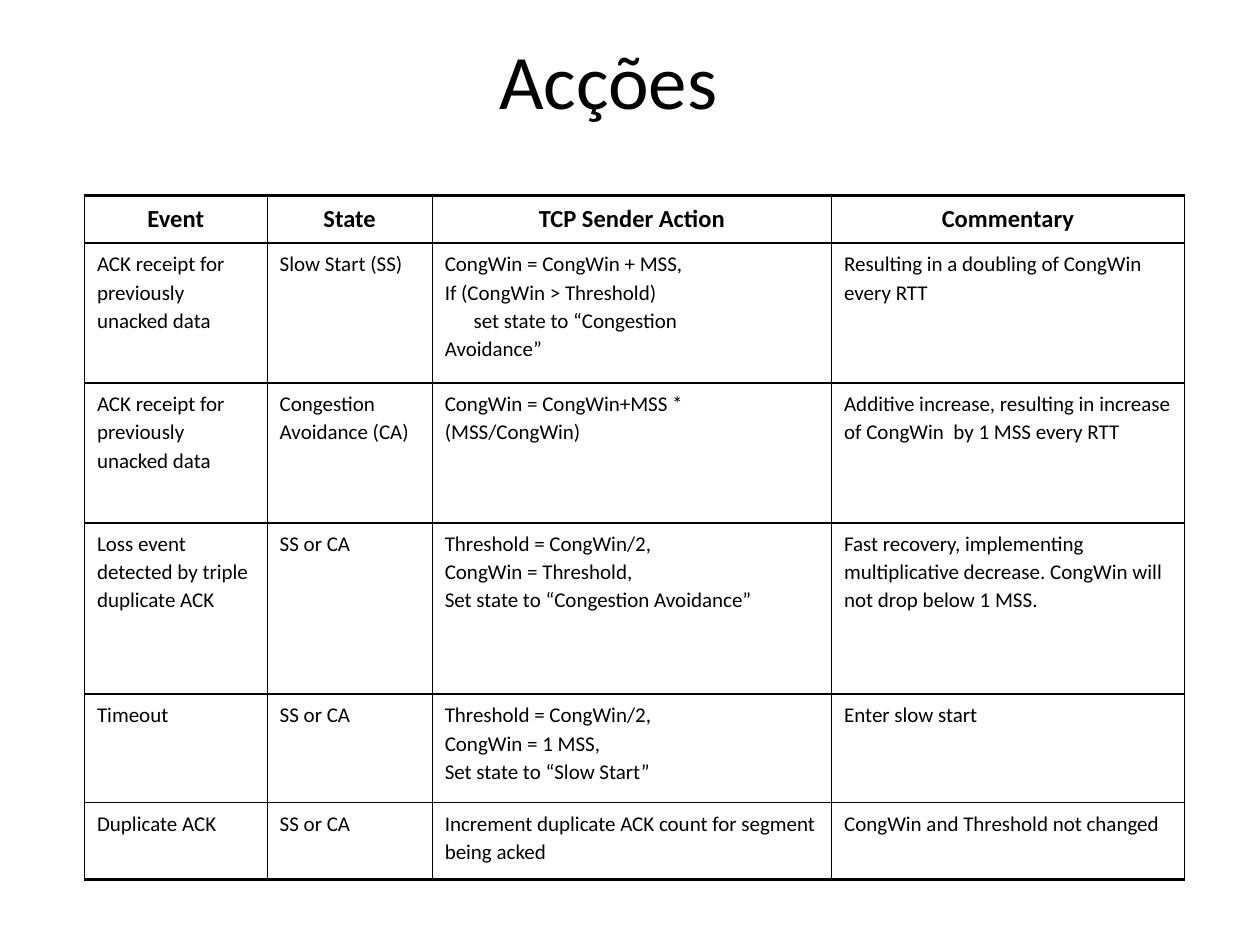
from lxml import etree
from pptx import Presentation, util as u
from pptx.dml.color import RGBColor
from pptx.enum import text
from pptx.oxml.ns import qn

INK, PAPER = "000000", "FFFFFF"
HEADERS = ["Event", "State", "TCP Sender Action", "Commentary"]
RULES = [
    ["ACK receipt for previously unacked data",
     "Slow Start (SS)",
     ["CongWin = CongWin + MSS,", "If (CongWin > Threshold)",
      "\tset state to “Congestion\vAvoidance”"],
     "Resulting in a doubling of CongWin every RTT"],
    ["ACK receipt for previously unacked data",
     ["Congestion", "Avoidance (CA)"],
     "CongWin = CongWin+MSS * (MSS/CongWin)",
     "Additive increase, resulting in increase of CongWin  by 1 MSS every RTT"],
    ["Loss event detected by triple duplicate ACK",
     "SS or CA",
     ["Threshold = CongWin/2,", "CongWin = Threshold,",
      "Set state to “Congestion Avoidance”"],
     "Fast recovery, implementing multiplicative decrease. "
     "CongWin will not drop below 1 MSS."],
    ["Timeout",
     "SS or CA",
     ["Threshold = CongWin/2,", "CongWin = 1 MSS,", "Set state to “Slow Start”"],
     "Enter slow start"],
    ["Duplicate ACK",
     "SS or CA",
     "Increment duplicate ACK count for segment being acked",
     "CongWin and Threshold not changed"],
]
COLUMN_WIDTHS = [14.5, 13.1, 31.7, 28]
ROW_HEIGHTS = [5.07, 14.8, 14.8, 18.13, 11.47, 8.13]


def color(value):
    return RGBColor.from_string(value)


def apply(target, values):
    for name, value in values.items():
        setattr(target, name, value)


class Page:
    """Draws on one slide; all lengths are percentages of the slide's size."""
    font = "Calibri"
    indent = u.Inches(0.23)
    title_style = dict(size=u.Pt(44), bold=False)
    header_style = dict(size=u.Pt(14), bold=True)
    body_style = dict(size=u.Pt(12), bold=False)

    def __init__(self, deck):
        self.deck = deck
        self.slide = deck.slides.add_slide(deck.slide_layouts[6])

    def x(self, share):
        return round(self.deck.slide_width * share / 100)

    def y(self, share):
        return round(self.deck.slide_height * share / 100)

    def fill_para(self, para, words, style, align, spacing=1.0):
        """Fill a paragraph; a leading tab indents it, a vertical tab breaks the line."""
        apply(para, dict(alignment=align, line_spacing=spacing))
        if words.startswith("\t"):
            para._p.get_or_add_pPr().set("indent", str(self.indent))
        para.text = words.lstrip("\t")
        for span in para.runs:
            apply(span.font, dict(style, name=self.font))
            span.font.color.rgb = color(INK)
        for line_break in para._p.findall(qn("a:br")):
            etree.SubElement(line_break, qn("a:rPr"), sz=str(int(style["size"].pt * 100)))

    def title(self, words, left, top, width, height):
        box = self.slide.shapes.add_textbox(
            self.x(left), self.y(top), self.x(width), self.y(height))
        apply(box.text_frame, dict(word_wrap=True, vertical_anchor=text.MSO_ANCHOR.MIDDLE))
        self.fill_para(box.text_frame.paragraphs[0], words, self.title_style,
                       text.PP_ALIGN.CENTER)

    def border(self, cell, top, bottom):
        properties = cell._tc.get_or_add_tcPr()
        for side, points in dict(L=0.75, R=0.75, T=top, B=bottom).items():
            line = etree.SubElement(properties, qn(f"a:ln{side}"), w=str(u.Pt(points)))
            fill = etree.SubElement(line, qn("a:solidFill"))
            etree.SubElement(fill, qn("a:srgbClr"), val=INK)

    def table(self, rows, left, top, widths, heights):
        grid = self.slide.shapes.add_table(
            len(rows), len(widths), self.x(left), self.y(top),
            self.x(sum(widths)), self.y(sum(heights))).table
        apply(grid, dict(first_row=False, horz_banding=False))
        for column, width in zip(grid.columns, widths):
            column.width = self.x(width)
        last = len(rows) - 1
        for r, (row, entries) in enumerate(zip(grid.rows, rows)):
            row.height = self.y(heights[r])
            style = self.body_style if r else self.header_style
            align = text.PP_ALIGN.LEFT if r else text.PP_ALIGN.CENTER
            for cell, entry in zip(row.cells, entries):
                self.border(cell, 1 if r else 2, 2 if r == last else 1)
                cell.fill.solid()
                cell.fill.fore_color.rgb = color(PAPER)
                frame = cell.text_frame
                for i, words in enumerate([entry] if isinstance(entry, str) else entry):
                    para = frame.add_paragraph() if i else frame.paragraphs[0]
                    self.fill_para(para, words, style, align, 1.1)


def main():
    deck = Presentation()
    apply(deck, dict(slide_width=u.Inches(10), slide_height=u.Inches(7.5)))
    page = Page(deck)
    page.title("Acções", 5.8, 3.33, 85, 10)
    page.table([HEADERS, *RULES], 6.7, 20.67, COLUMN_WIDTHS, ROW_HEIGHTS)
    deck.save("out.pptx")


if __name__ == "__main__":
    main()
